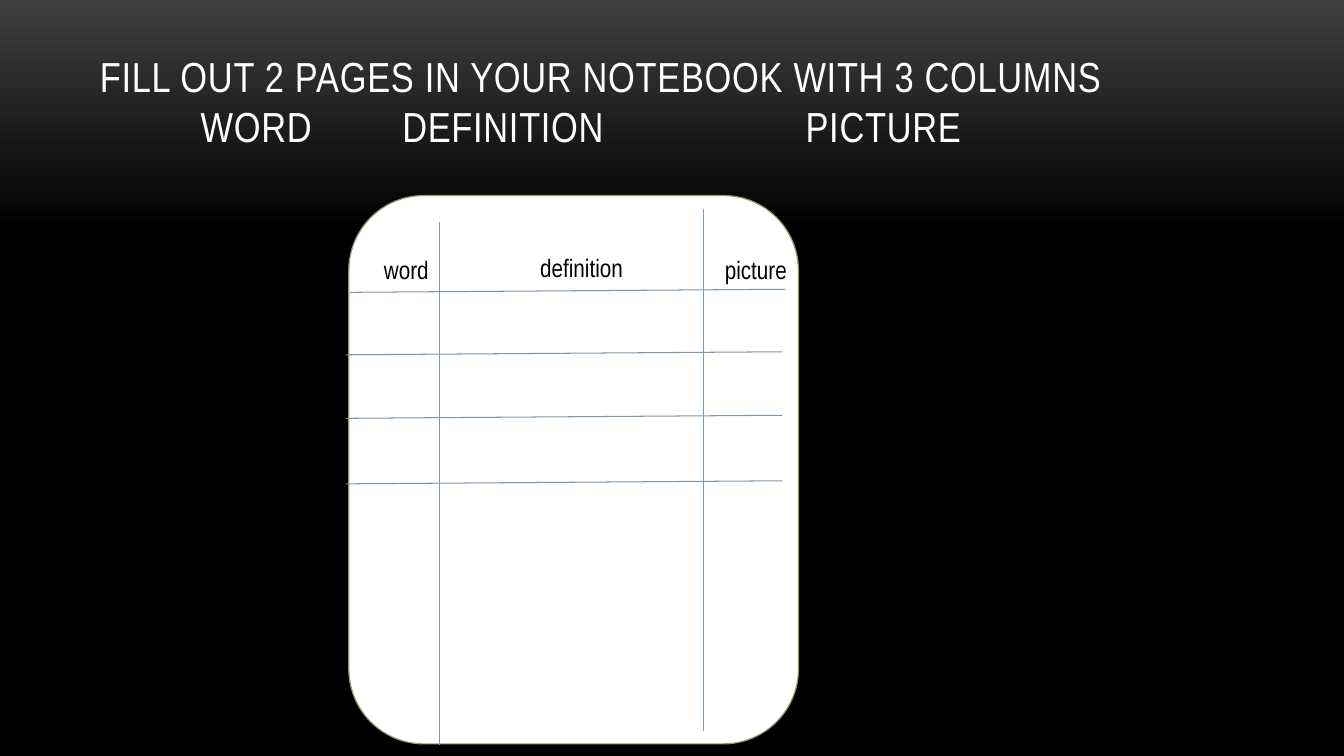
from copy import deepcopy
from dataclasses import dataclass

from lxml.etree import SubElement
from pptx import Presentation
from pptx.dml.color import RGBColor
from pptx.enum.shapes import MSO_CONNECTOR, MSO_SHAPE
from pptx.enum.text import MSO_ANCHOR, MSO_AUTO_SIZE, PP_ALIGN
from pptx.oxml.ns import qn
from pptx.slide import Slide
from pptx.text.text import _Run
from pptx.util import Emu, Pt


@dataclass(frozen=True)
class Theme:
    font: str = "Arial Narrow"
    title_size: int = 30
    label_size: int = 18
    letter_spacing: int = 50
    rule_width: float = 0.75
    page_edge_width: float = 0.85
    glow: RGBColor = RGBColor(0x3F, 0x3F, 0x3F)
    dark: RGBColor = RGBColor(0x00, 0x00, 0x00)
    light: RGBColor = RGBColor(0xFF, 0xFF, 0xFF)
    page_edge: RGBColor = RGBColor(0x9D, 0x93, 0x6F)
    rule: RGBColor = RGBColor(0x7E, 0x97, 0xAD)


@dataclass(frozen=True)
class Rule:
    x1: int
    y1: int
    x2: int
    y2: int


@dataclass(frozen=True)
class Heading:
    word: str
    left: int
    top: int
    width: int


THEME = Theme()
ROW_RISE = 3
HEADING_HEIGHT = 40
TITLE_TABS = (100, 300, 600, 700)
TITLE_LINES = (
    "FILL OUT 2 PAGES IN YOUR NOTEBOOK WITH 3 COLUMNS",
    "\tWORD\tDEFINITION\t\tPICTURE",
)
HEADINGS = (
    Heading("word", 371, 247, 65),
    Heading("definition", 526, 245, 103),
    Heading("picture", 709, 247, 82),
)
COLUMN_RULES = (Rule(436, 220, 436, 739), Rule(698, 207, 698, 725))
ROW_RULES = (Rule(347, 290, 779, 290 - ROW_RISE),) + tuple(
    Rule(343, y, 776, y - ROW_RISE) for y in (352, 415, 480)
)


def px(length: int) -> Emu:
    return Emu(length * 9144)


def style_run(run: _Run, size: int, color: RGBColor) -> None:
    run.font.name = THEME.font
    run.font.size = Pt(size)
    run.font.color.rgb = color


def paint_background(slide: Slide) -> None:
    fill = slide.background.fill
    fill.gradient()
    fill.gradient_angle = 270
    top, fade = fill.gradient_stops
    top.color.rgb, top.position = THEME.glow, 0
    fade.color.rgb, fade.position = THEME.dark, 0.31
    fade_element = list(slide.element.iter(qn("a:gs")))[-1]
    bottom_element = deepcopy(fade_element)
    bottom_element.set("pos", "100000")
    fade_element.addnext(bottom_element)


def write_title(slide: Slide) -> None:
    title = slide.shapes.title
    title.left, title.top, title.width, title.height = map(px, (89, 30, 1156, 125))
    frame = title.text_frame
    frame.word_wrap = True
    frame.auto_size = MSO_AUTO_SIZE.NONE
    frame.vertical_anchor = MSO_ANCHOR.BOTTOM
    paragraph = frame.paragraphs[0]
    paragraph.alignment = PP_ALIGN.LEFT
    paragraph.line_spacing = 1.0
    tab_list = SubElement(paragraph._p.get_or_add_pPr(), qn("a:tabLst"))
    for position in TITLE_TABS:
        SubElement(tab_list, qn("a:tab"), pos=str(px(position)), algn="l")
    for index, line in enumerate(TITLE_LINES):
        if index:
            paragraph.add_line_break()
        run = paragraph.add_run()
        run.text = line
        style_run(run, THEME.title_size, THEME.light)
        run.font._element.set("spc", str(THEME.letter_spacing))


def draw_page(slide: Slide) -> None:
    page = slide.shapes.add_shape(
        MSO_SHAPE.ROUNDED_RECTANGLE, px(346), px(194), px(446), px(544)
    )
    page.shadow.inherit = False
    page.fill.solid()
    page.fill.fore_color.rgb = THEME.light
    page.line.color.rgb = THEME.page_edge
    page.line.width = Pt(THEME.page_edge_width)


def draw_rule(slide: Slide, rule: Rule) -> None:
    line = slide.shapes.add_connector(
        MSO_CONNECTOR.STRAIGHT, px(rule.x1), px(rule.y1), px(rule.x2), px(rule.y2)
    )
    line.line.color.rgb = THEME.rule
    line.line.width = Pt(THEME.rule_width)
    SubElement(line._element.spPr, qn("a:effectLst"))


def write_heading(slide: Slide, heading: Heading) -> None:
    label = slide.shapes.add_textbox(
        px(heading.left), px(heading.top), px(heading.width), px(HEADING_HEIGHT)
    )
    frame = label.text_frame
    frame.word_wrap = False
    frame.auto_size = MSO_AUTO_SIZE.SHAPE_TO_FIT_TEXT
    run = frame.paragraphs[0].add_run()
    run.text = heading.word
    style_run(run, THEME.label_size, THEME.dark)


def main() -> None:
    presentation = Presentation()
    presentation.slide_width, presentation.slide_height = px(1333), px(750)
    slide = presentation.slides.add_slide(presentation.slide_layouts[5])
    paint_background(slide)
    write_title(slide)
    draw_page(slide)
    for rule in COLUMN_RULES + ROW_RULES:
        draw_rule(slide, rule)
    for heading in HEADINGS:
        write_heading(slide, heading)
    presentation.save("out.pptx")


if __name__ == "__main__":
    main()
